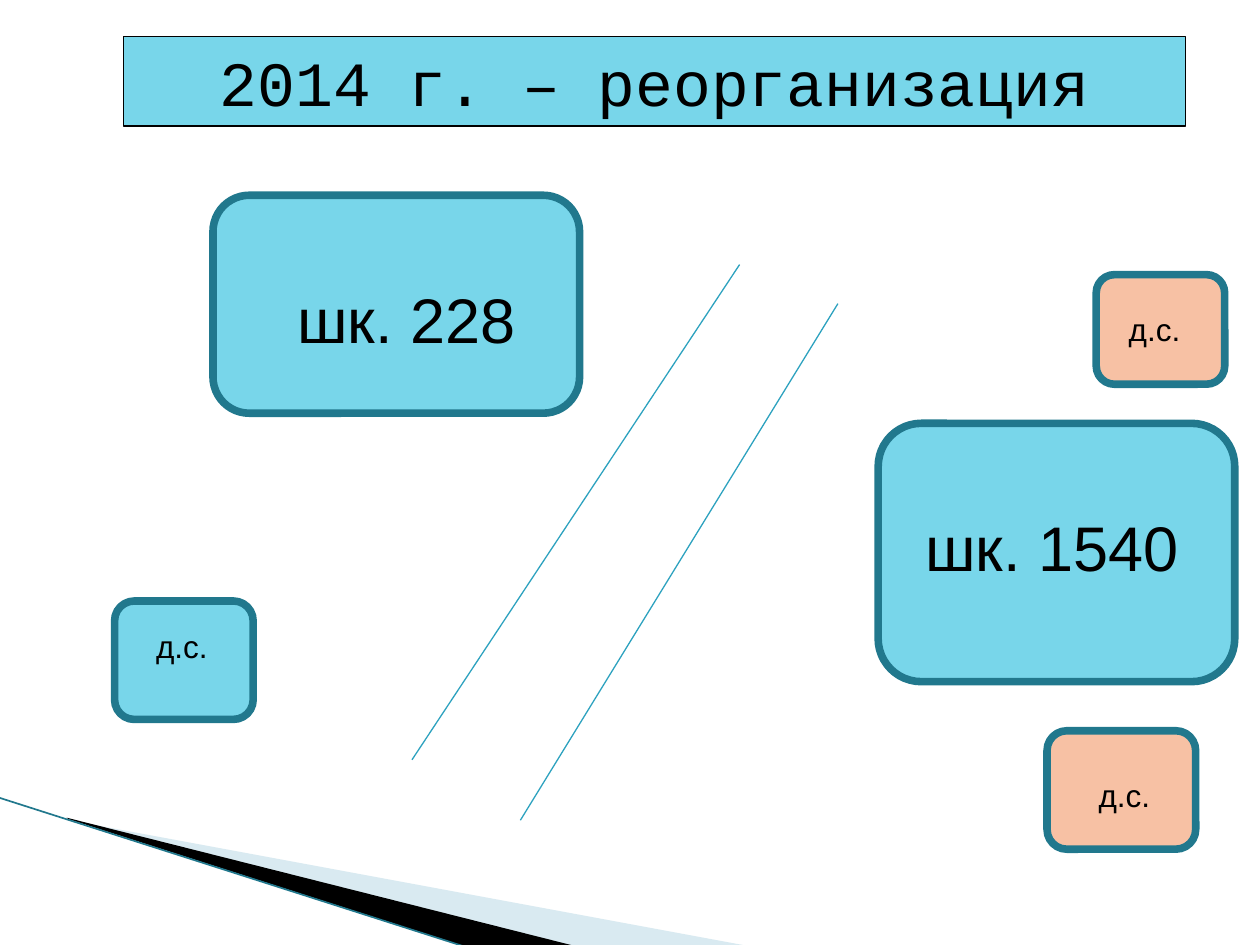
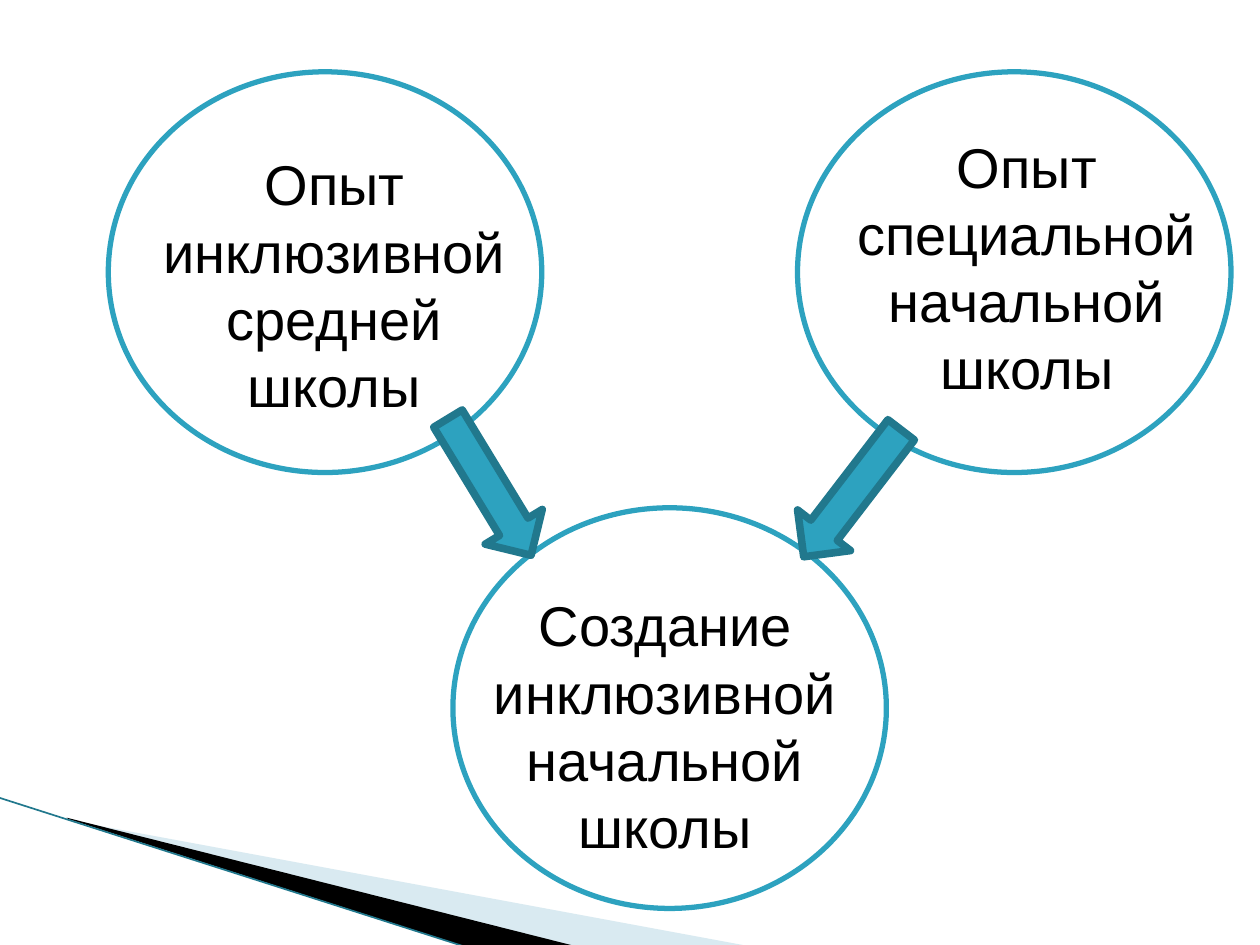
from lxml.etree import SubElement
from pptx import Presentation
from pptx.dml.color import RGBColor
from pptx.enum.shapes import MSO_CONNECTOR as Link, MSO_SHAPE as Shape
from pptx.enum.text import MSO_ANCHOR as Anchor, PP_ALIGN as Align
from pptx.oxml.ns import qn
from pptx.util import Inches, Pt

WIDE, HIGH = Inches(10), Inches(7.5)
CELL = WIDE / 100  # grid of 100 columns by 75 rows

BLACK, WHITE = "000000", "FFFFFF"
AQUA, TEAL, DARK = "78D6EA", "2DA2BF", "21788D"
PEACH, MIST = "F7C1A4", "A0CBDC"


def cells(*nums):
    return [round(n * CELL) for n in nums]


def shade(fmt, hue):
    """Give a fill or a line one plain colour."""
    getattr(fmt, "fill", fmt).solid()
    getattr(fmt, "fill", fmt).fore_color.rgb = RGBColor.from_string(hue)


def style(shape, fill, edge=None, width=0):
    shape.shadow.inherit = False
    shade(shape.fill, fill)
    if edge:
        shade(shape.line, edge)
        shape.line.width = Pt(width)
    else:
        shape.line.fill.background()
    return shape


def write(shape, text, size=18, font="Arial", hue=BLACK, align=Align.CENTER,
          anchor=Anchor.TOP):
    frame = shape.text_frame
    frame.word_wrap = True
    frame.vertical_anchor = anchor
    par = frame.paragraphs[0]
    par.alignment = align
    run = par.add_run()
    run.text = text
    run.font.size, run.font.name = Pt(size), font
    run.font.color.rgb = RGBColor.from_string(hue)


def block(slide, kind, box, fill, edge, width):
    return style(slide.shapes.add_shape(kind, *cells(*box)), fill, edge, width)


def label(slide, box, inset, text, **fmt):
    """Put text at inset (left, top, width, height) within the box."""
    left, top, wide, high = inset
    spot = cells(box[0] + left, box[1] + top, wide, high)
    write(slide.shapes.add_textbox(*spot), text, **fmt)


def line(slide, start, end, hue, width):
    link = slide.shapes.add_connector(Link.STRAIGHT, *cells(*start, *end))
    shade(link.line, hue)
    link.line.width = Pt(width)
    SubElement(link._element.spPr, qn("a:effectLst"))


def wedge(slide, points, fill, alpha=None):
    first, *rest = [cells(*p) for p in points]
    pen = slide.shapes.build_freeform(*first, scale=1.0)
    pen.add_line_segments(rest, close=True)
    shape = style(pen.convert_to_shape(), fill)
    if alpha:
        tint = shape._element.spPr.find(qn("a:solidFill"))[0]
        SubElement(tint, qn("a:alpha"), val=str(alpha * 1000))


def corner(slide):
    wedge(slide, [(5.5, 65.1), (59.5, 75.1), (45.6, 75.1), (5.5, 65)], MIST, 40)
    wedge(slide, [(5.3, 64.9), (45.7, 75.1), (37.2, 75.2), (5.4, 65)], BLACK)
    line(slide, (-0.1, 63.3), (37.1, 75.2), DARK, 0.95)


def title(slide, box, text):
    bar = block(slide, Shape.RECTANGLE, box, AQUA, BLACK, 0.75)
    write(bar, text, size=36, font="Courier New", anchor=Anchor.MIDDLE)


def site(slide, box, fill, inset, text, **fmt):
    block(slide, Shape.ROUNDED_RECTANGLE, box, fill, DARK, 4.33)
    label(slide, box, inset, text, **fmt)


def school(slide, box, left, wide, text):
    site(slide, box, AQUA, (left, 6.3, wide, 7.1), text, size=36)


def nursery(slide, box, fill, left, top):
    site(slide, box, fill, (left, top, 7.1, 4), "д.с.", align=Align.LEFT)


def circle(slide, col, row, inset, text):
    box = (8.6 + 27.35 * col, 5.7 + 34.6 * row, 34.4, 31.8)
    block(slide, Shape.OVAL, box, WHITE, TEAL, 3)
    label(slide, box, (*inset, 22.6), text, size=32)


def arrow(slide, left, top, turn):
    box = (left, top, 12.7, 5.3)
    block(slide, Shape.RIGHT_ARROW, box, TEAL, DARK, 4.33).rotation = turn


def merger(slide):
    title(slide, (9.8, 2.9, 84.3, 7.1), "2014 г. – реорганизация")
    school(slide, (16.9, 15.5, 29.1, 17.3), 5.5, 19.7, "шк. 228")
    school(slide, (69.7, 33.6, 28.3, 20.5), 1.6, 24.4, "шк. 1540")
    nursery(slide, (9.1, 47.7, 11, 9.4), AQUA, 2.3, 1.6)
    nursery(slide, (87, 21.8, 10.2, 8.7), PEACH, 1.6, 2.3)
    nursery(slide, (83.1, 58, 11.8, 9.4), PEACH, 3.1, 3.1)
    line(slide, (58.7, 21), (32.7, 60.3), TEAL, 0.75)
    line(slide, (66.5, 24.1), (41.3, 65.1), TEAL, 0.75)


def union(slide):
    circle(slide, 0, 0, (3.1, 5.7, 29.7), "Опыт инклюзивной средней школы")
    circle(slide, 1, 1, (1.5, 6.1, 30.7), "Создание инклюзивной начальной школы")
    circle(slide, 2, 0, (3.6, 4.3, 29.2), "Опыт специальной начальной школы")
    arrow(slide, 32.5, 36, 58.7)
    arrow(slide, 61.3, 36.5, 127.5)


def main():
    deck = Presentation()
    deck.slide_width, deck.slide_height = WIDE, HIGH
    for build in (merger, union):
        slide = deck.slides.add_slide(deck.slide_layouts[6])
        shade(slide.background.fill, WHITE)
        corner(slide)
        build(slide)
    deck.save("out.pptx")


if __name__ == "__main__":
    main()
